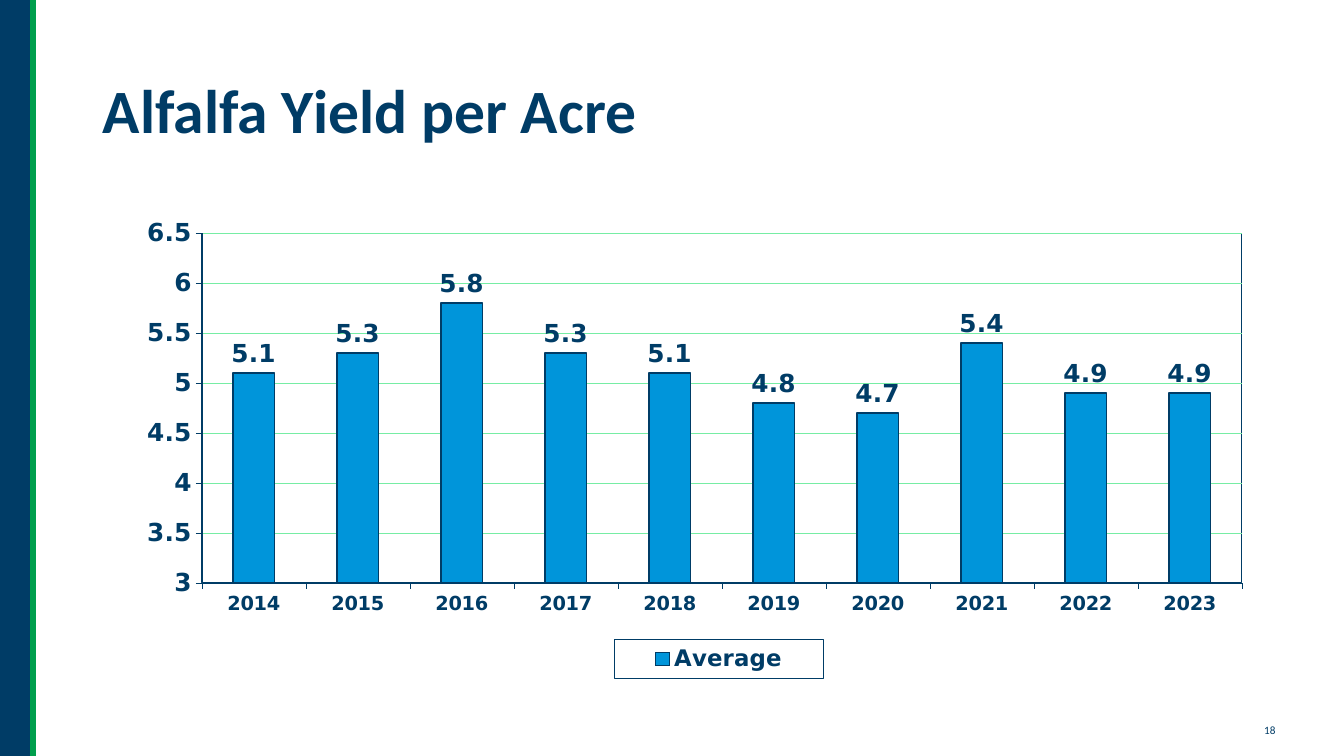
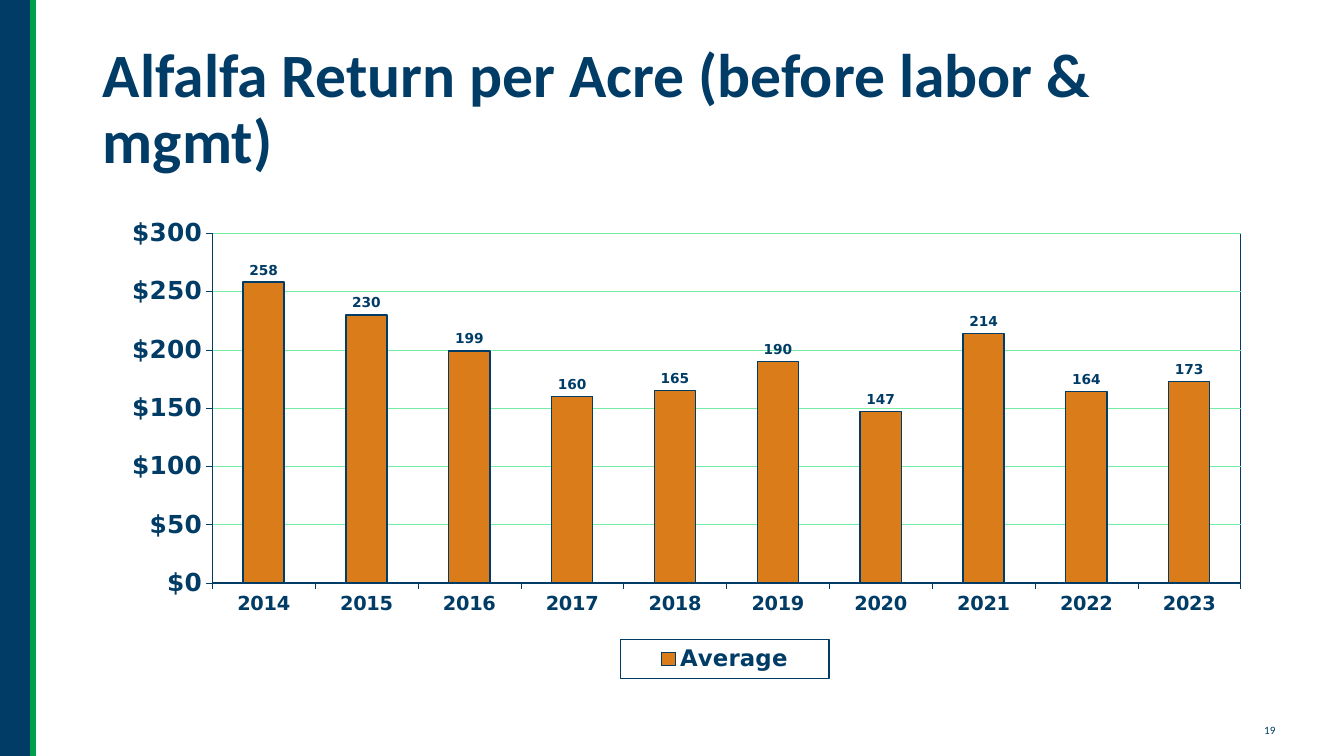
from lxml import etree
from pptx import Presentation
from pptx.chart.data import CategoryChartData
from pptx.dml.color import RGBColor
from pptx.enum.chart import XL_CHART_TYPE, XL_LABEL_POSITION, XL_LEGEND_POSITION, XL_TICK_MARK
from pptx.enum.shapes import MSO_CONNECTOR, MSO_SHAPE
from pptx.enum.text import MSO_ANCHOR, MSO_AUTO_SIZE, PP_ALIGN
from pptx.oxml import parse_xml
from pptx.oxml.ns import nsdecls, qn
from pptx.util import Inches, Pt

# Content
YEARS = [str(year) for year in range(2014, 2024)]
SLIDES = [
    dict(title="Alfalfa Yield per Acre", number="18", title_top=0.4, bar="blue",
         values=[5.1, 5.3, 5.8, 5.3, 5.1, 4.8, 4.7, 5.4, 4.9, 4.9],
         scale=(3, 6.5, 0.5), axis_format="General", label_size=17.7,
         plot=(0.094, 0.066, 0.897, 0.729), legend=(0.45, 0.912, 0.18, 0.083)),
    dict(title="Alfalfa Return per Acre (before labor & mgmt)", number="19",
         title_top=0.37, bar="orange",
         values=[258, 230, 199, 160, 165, 190, 147, 214, 164, 173],
         scale=(0, 300, 50), axis_format='"$"#,##0', label_size=9.8,
         plot=(0.103, 0.066, 0.887, 0.729), legend=(0.455, 0.912, 0.18, 0.083)),
]

# Shared style
COLORS = {"navy": "003C66", "green": "009F4D", "grid": "76EDA4",
          "blue": "0095DA", "orange": "DB7C1B"}
TEXT_FONT, CHART_FONT = "Calibri", "DejaVu Sans"
LEFT, WIDTH = Inches(0.92), Inches(11.5)
BAND = Inches(0.33)


def color(name):
    return RGBColor.from_string(COLORS[name])


def style_font(font, name, size, bold=False):
    font.name, font.size, font.bold = name, Pt(size), bold
    font.color.rgb = color("navy")


def style_line(line, name, width):
    line.color.rgb = color(name)
    line.width = Pt(width)


# Chart XML helpers
def manual_layout(box, inner=False):
    target = '<c:layoutTarget val="inner"/>' if inner else ""
    modes = "".join(f'<c:{k}Mode val="edge"/>' for k in "xy")
    sizes = "".join(f'<c:{k} val="{v}"/>' for k, v in zip("xywh", box))
    return parse_xml(f'<c:layout {nsdecls("c")}><c:manualLayout>{target}{modes}{sizes}'
                     '</c:manualLayout></c:layout>')


def outline():
    return parse_xml(f'<c:spPr {nsdecls("c", "a")}><a:noFill/><a:ln w="9525"><a:solidFill>'
                     f'<a:srgbClr val="{COLORS["navy"]}"/></a:solidFill></a:ln></c:spPr>')


def place_parts(chart, plot_box, legend_box):
    plot_area = chart.element.find(".//" + qn("c:plotArea"))
    legend = chart.element.find(".//" + qn("c:legend"))
    for part in (plot_area, legend):
        for old in part.findall(qn("c:layout")):
            part.remove(old)
    plot_area.insert(0, manual_layout(plot_box, inner=True))
    plot_area.append(outline())
    legend.find(qn("c:legendPos")).addnext(manual_layout(legend_box))
    legend.find(qn("c:txPr")).addprevious(outline())


# Slide parts
def add_frame(s, number):
    band = s.shapes.add_shape(MSO_SHAPE.RECTANGLE, 0, 0, BAND, prs.slide_height)
    band.shadow.inherit = False
    band.fill.solid()
    band.fill.fore_color.rgb = color("navy")
    band.line.fill.background()

    edge = s.shapes.add_connector(MSO_CONNECTOR.STRAIGHT, BAND, 0, BAND, prs.slide_height)
    style_line(edge.line, "green", 4.5)
    etree.SubElement(edge.element.spPr, qn("a:effectLst"))

    tf = s.shapes.add_textbox(Inches(12.44), Inches(7.13), Inches(0.34), Inches(0.24)).text_frame
    tf.word_wrap = False
    r = tf.paragraphs[0].add_run()
    r.text = number
    style_font(r.font, TEXT_FONT, 8)


def add_title(s, text, top):
    title = s.shapes.title
    title.left, title.top, title.width, title.height = LEFT, Inches(top), WIDTH, Inches(1.45)
    tf = title.text_frame
    tf.word_wrap = True
    tf.auto_size = MSO_AUTO_SIZE.NONE
    tf.vertical_anchor = MSO_ANCHOR.MIDDLE
    p = tf.paragraphs[0]
    p.alignment = PP_ALIGN.LEFT
    p.line_spacing = 0.9
    r = p.add_run()
    r.text = text
    style_font(r.font, TEXT_FONT, 44, bold=True)


def add_bars(s, item):
    data = CategoryChartData()
    data.categories = YEARS
    data.add_series("Average", item["values"])
    chart = s.shapes.add_chart(XL_CHART_TYPE.COLUMN_CLUSTERED, LEFT, Inches(2),
                               WIDTH, Inches(4.76), data).chart
    chart.has_title = False
    style_font(chart.font, CHART_FONT, 17.7, bold=True)

    # Axes
    for axis, size in ((chart.category_axis, 13.8), (chart.value_axis, 17.7)):
        axis.major_tick_mark = XL_TICK_MARK.OUTSIDE
        axis.minor_tick_mark = XL_TICK_MARK.NONE
        style_font(axis.tick_labels.font, CHART_FONT, size, bold=True)
        style_line(axis.format.line, "navy", 0.25)
    axis = chart.value_axis
    axis.minimum_scale, axis.maximum_scale, axis.major_unit = item["scale"]
    axis.tick_labels.number_format = item["axis_format"]
    axis.tick_labels.number_format_is_linked = False
    axis.has_major_gridlines = True
    style_line(axis.major_gridlines.format.line, "grid", 0.25)

    # Bars and labels
    plot = chart.plots[0]
    plot.gap_width = 150
    plot.vary_by_categories = False
    bars = plot.series[0]
    bars.format.fill.solid()
    bars.format.fill.fore_color.rgb = color(item["bar"])
    style_line(bars.format.line, "navy", 1)
    labels = bars.data_labels
    labels.show_value = True
    labels.position = XL_LABEL_POSITION.OUTSIDE_END
    style_font(labels.font, CHART_FONT, item["label_size"], bold=True)

    # Legend
    chart.has_legend = True
    chart.legend.position = XL_LEGEND_POSITION.BOTTOM
    chart.legend.include_in_layout = False
    style_font(chart.legend.font, CHART_FONT, 16.3, bold=True)
    place_parts(chart, item["plot"], item["legend"])


prs = Presentation()
prs.slide_width, prs.slide_height = Inches(13.33), Inches(7.5)
for item in SLIDES:
    s = prs.slides.add_slide(prs.slide_layouts[5])
    add_frame(s, item["number"])
    add_title(s, item["title"], item["title_top"])
    add_bars(s, item)
prs.save("out.pptx")
